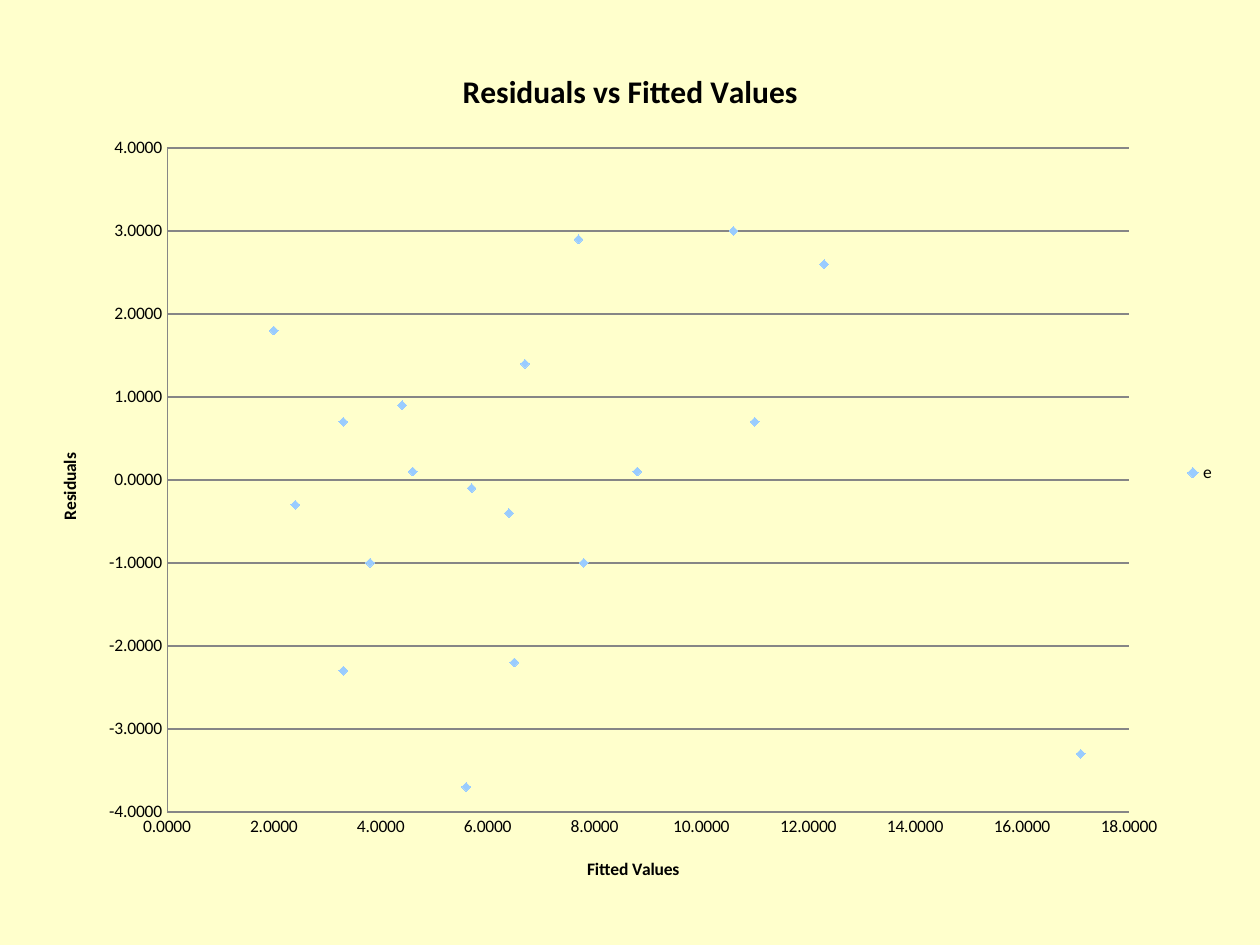
from dataclasses import dataclass

from lxml import etree
from pptx import Presentation
from pptx.chart.data import XyChartData
from pptx.dml.color import RGBColor
from pptx.enum.chart import (XL_AXIS_CROSSES, XL_CHART_TYPE, XL_LEGEND_POSITION,
                             XL_MARKER_STYLE, XL_TICK_LABEL_POSITION, XL_TICK_MARK)
from pptx.oxml.ns import qn
from pptx.util import Emu, Pt

SCATTER = XL_CHART_TYPE.XY_SCATTER
DIAMOND = XL_MARKER_STYLE.DIAMOND
NO_TICK = XL_TICK_MARK.NONE
NEXT_TO_AXIS = XL_TICK_LABEL_POSITION.NEXT_TO_AXIS
MINIMUM = XL_AXIS_CROSSES.MINIMUM
RIGHT = XL_LEGEND_POSITION.RIGHT
PX = 914400 // 126
BLANK_LAYOUT = 6


@dataclass(frozen=True)
class Theme:
    font: str = "Calibri"
    background: RGBColor = RGBColor(0xFF, 0xFF, 0xCC)
    text: RGBColor = RGBColor(0, 0, 0)
    line: RGBColor = RGBColor(0x86, 0x86, 0x86)
    marker: RGBColor = RGBColor(0x99, 0xCC, 0xFF)
    title_size: int = 18
    body_size: int = 10


THEME = Theme()
CHART_BOX = (33, 40, 1194, 866)
# (fitted value, residual)
POINTS = [
    (5.6, -3.7), (3.3, -2.3), (6.5, -2.2), (2.4, -0.3), (3.8, -1.0),
    (17.1, -3.3), (5.7, -0.1), (3.3, 0.7), (4.6, 0.1), (8.8, 0.1),
    (7.8, -1.0), (6.4, -0.4), (6.7, 1.4), (11.0, 0.7), (12.3, 2.6),
    (4.4, 0.9), (10.6, 3.0), (2.0, 1.8), (7.7, 2.9),
]


def place_part(element, index, box, left, top, width=None, height=None):
    """Give a chart part a manual layout; px within the chart box."""
    for old in element.findall(qn("c:layout")):
        element.remove(old)
    layout = etree.Element(qn("c:layout"))
    manual = etree.SubElement(layout, qn("c:manualLayout"))
    settings = [("xMode", "edge"), ("yMode", "edge"),
                ("x", left / box[2]), ("y", top / box[3])]
    if width:
        settings.insert(0, ("layoutTarget", "inner"))
        settings += [("w", width / box[2]), ("h", height / box[3])]
    for name, value in settings:
        etree.SubElement(manual, qn(f"c:{name}")).set("val", str(value))
    element.insert(index, layout)


def write_title(title, text, size, box, left, top):
    para = title.text_frame.paragraphs[0]
    para.text = text
    font = para.font
    font.name, font.size, font.bold = THEME.font, Pt(size), True
    font.color.rgb = THEME.text
    place_part(title._element, 1, box, left, top)


def format_axis(axis, low, high, step):
    axis.minimum_scale, axis.maximum_scale, axis.major_unit = low, high, step
    axis.major_tick_mark = axis.minor_tick_mark = NO_TICK
    axis.tick_label_position = NEXT_TO_AXIS
    axis.tick_labels.number_format = "0.0000"
    axis.tick_labels.number_format_is_linked = False
    axis.crosses = MINIMUM
    axis.format.line.color.rgb = THEME.line
    axis.format.line.width = Pt(0.25)


def add_residual_chart(page, box):
    data = XyChartData(number_format="0.0000")
    residuals = data.add_series("e")
    for fitted, residual in POINTS:
        residuals.add_data_point(fitted, residual)
    frame = page.shapes.add_chart(SCATTER, *(Emu(side * PX) for side in box), data)
    chart = frame.chart
    chart.font.name, chart.font.size = THEME.font, Pt(THEME.body_size)
    chart.font.color.rgb = THEME.text

    chart.has_title = True
    write_title(chart.chart_title, "Residuals vs Fitted Values",
                THEME.title_size, box, 424, 24)
    fitted_axis, residual_axis = chart.category_axis, chart.value_axis
    write_title(fitted_axis.axis_title, "Fitted Values", THEME.body_size, box, 551, 814)
    write_title(residual_axis.axis_title, "Residuals", THEME.body_size, box, 22, 410)
    format_axis(fitted_axis, 0, 18, 2)
    format_axis(residual_axis, -4, 4, 1)
    fitted_axis.has_major_gridlines = False
    residual_axis.has_major_gridlines = True
    grid = residual_axis.major_gridlines.format.line
    grid.color.rgb, grid.width = THEME.line, Pt(1)

    series = chart.plots[0].series[0]
    chart.plots[0].vary_by_categories = False
    series.smooth = False
    series.format.line.fill.background()
    series.marker.style, series.marker.size = DIAMOND, 5
    series.marker.format.fill.solid()
    series.marker.format.fill.fore_color.rgb = THEME.marker
    series.marker.format.line.color.rgb = THEME.marker

    chart.has_legend = True
    chart.legend.position = RIGHT
    chart.legend.include_in_layout = False
    place_part(chart.legend._element, 1, box, 1149, 418)
    plot_area = chart._chartSpace.find(f".//{qn('c:plotArea')}")
    place_part(plot_area, 0, box, 134, 108, 962, 664)


def main():
    deck = Presentation()
    deck.slide_width, deck.slide_height = Emu(1260 * PX), Emu(945 * PX)
    page = deck.slides.add_slide(deck.slide_layouts[BLANK_LAYOUT])
    page.background.fill.solid()
    page.background.fill.fore_color.rgb = THEME.background
    add_residual_chart(page, CHART_BOX)
    deck.save("out.pptx")


if __name__ == "__main__":
    main()
